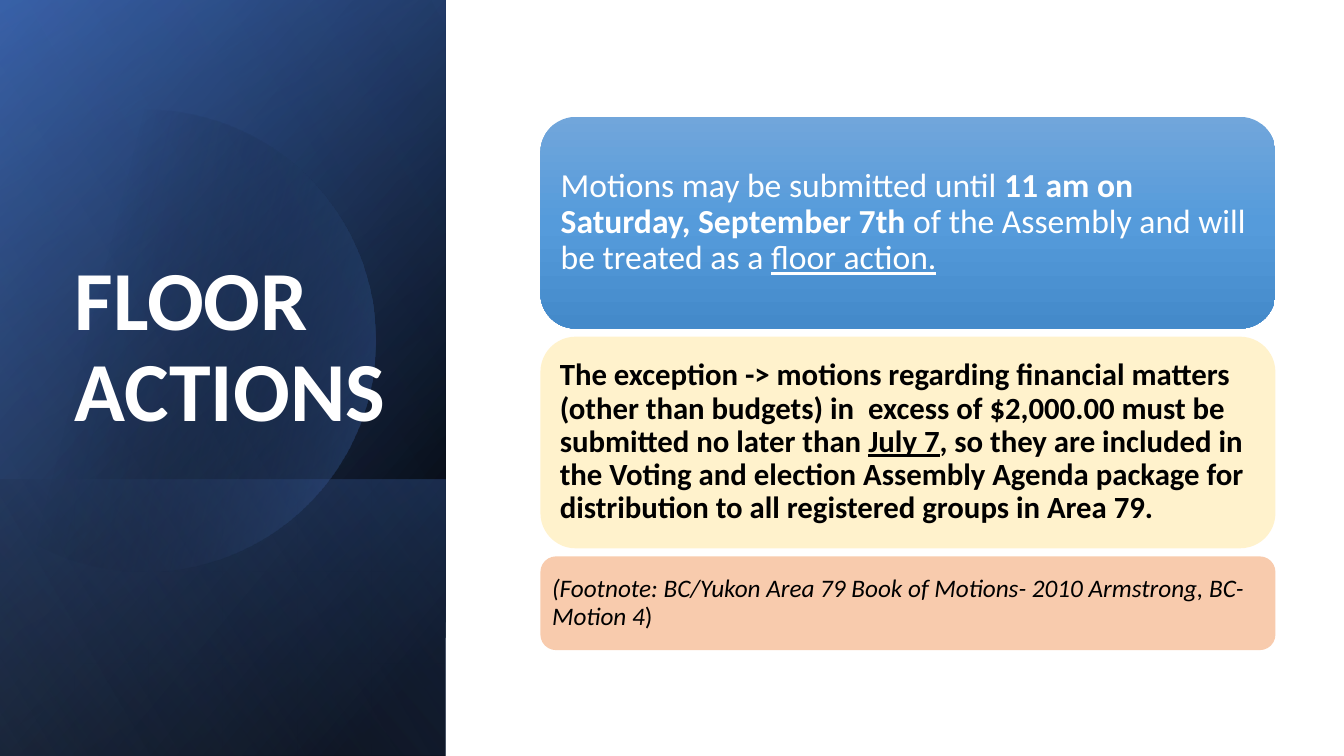
import math
import pptx
import pptx.dml.color
import pptx.enum.shapes
import pptx.enum.text
import pptx.oxml
import pptx.oxml.ns
import pptx.util

WIDTH, HEIGHT = 13.33, 7.5
PANEL_WIDTH = 4.42
TITLE = "FLOOR ACTIONS"
TITLE_FORMAT = {"size": 60, "bold": True, "color": "FFFFFF"}

PANEL_LAYERS = [
    (0, 50, [(8, "000000", 100), (100, "2F5597", 100)]),
    (0, 30, [(0, "000000", 0), (99, "4472C4", 46)]),
    (4.76, 130, [(2, "4472C4", 29), (100, "000000", 30)]),
]
GLOW_LAYER = (0, 120, [(0, "000000", 0), (99, "8FAADC", 11)])
DISC = {"x": 1.43, "y": 3.38, "radius": 2.29}
DISC_FILL = (14, [(29, "000000", 0), (100, "4472C4", 43)])

CARD_LEFT, CARD_TOP, CARD_WIDTH, CARD_GAP = 5.36, 1.16, 7.29, 0.08
CARDS = [
    {
        "height": 2.1, "inset": 0.1,
        "fill": (90, [(0, "71A6DB", 100), (50, "559BDB", 100), (100, "448ACA", 100)]),
        "format": {"size": 24, "color": "FFFFFF"},
        "spans": [
            ("Motions may be submitted until ", {}),
            ("11 am on Saturday, September 7th ", {"bold": True}),
            ("of the Assembly and will be treated as a ", {}),
            ("floor action.", {"underline": True}),
        ],
    },
    {
        "height": 2.1, "inset": 0.09, "fill": "FFF2CC",
        "format": {"size": 22, "color": "000000", "bold": True},
        "spans": [
            ("The exception -> motions regarding financial matters (other than budgets) in  "
             "excess of $2,000.00 must be submitted no later than ", {}),
            ("July 7", {"underline": True}),
            (", so they are included in the Voting and election Assembly Agenda package "
             "for distribution to all registered groups in Area 79.", {}),
        ],
    },
    {
        "height": 0.93, "inset": 0.07, "fill": "F8CBAD",
        "format": {"size": 18, "color": "000000"},
        "spans": [
            ("(Footnote: BC/Yukon Area 79 Book of Motions- 2010 Armstrong, BC-Motion 4",
             {"italic": True}),
            (")", {}),
        ],
    },
]


def rgb(value):
    return pptx.dml.color.RGBColor.from_string(value)


def inches(*lengths):
    return [pptx.util.Inches(length) for length in lengths]


def paint(shape, fill):
    shape.shadow.inherit = False
    shape.line.fill.background()
    if isinstance(fill, str):
        shape.fill.solid()
        shape.fill.fore_color.rgb = rgb(fill)
        return
    angle, stops = fill
    stop_xml = "".join(
        f'<a:gs pos="{place * 1000}"><a:srgbClr val="{color}">'
        f'<a:alpha val="{opacity * 1000}"/></a:srgbClr></a:gs>'
        for place, color, opacity in stops
    )
    gradient = pptx.oxml.parse_xml(
        f'<a:gradFill {pptx.oxml.ns.nsdecls("a")} rotWithShape="1"><a:gsLst>{stop_xml}'
        f'</a:gsLst><a:lin ang="{angle * 60000}" scaled="0"/></a:gradFill>'
    )
    shape.element.spPr.insert(2, gradient)


def write(shape, spans, base, anchor, inset):
    frame = shape.text_frame
    frame.word_wrap = True
    frame.vertical_anchor = anchor
    for side in ("left", "right", "top", "bottom"):
        setattr(frame, f"margin_{side}", pptx.util.Inches(inset))
    para = frame.paragraphs[0]
    para.alignment = pptx.enum.text.PP_ALIGN.LEFT
    para.line_spacing = 0.9
    for text, extra in spans:
        span = para.add_run()
        span.text = text
        values = {"name": "Calibri", **base, **extra}
        span.font.color.rgb = rgb(values.pop("color"))
        values["size"] = pptx.util.Pt(values["size"])
        for name, value in values.items():
            setattr(span.font, name, value)


def add_layer(page, top, angle, stops):
    length = HEIGHT - top
    left = (PANEL_WIDTH - length) / 2
    box_top = top + (length - PANEL_WIDTH) / 2
    layer = page.shapes.add_shape(
        pptx.enum.shapes.MSO_SHAPE.RECTANGLE, *inches(left, box_top, length, PANEL_WIDTH))
    layer.rotation = 90
    layer.element.spPr.find(pptx.oxml.ns.qn("a:xfrm")).set("flipH", "1")
    paint(layer, (angle, stops))


def add_disc(page):
    limit = math.acos(-DISC["x"] / DISC["radius"])
    steps = 120
    points = []
    for step in range(steps + 1):
        turn = -limit + 2 * limit * step / steps
        points.append(inches(DISC["x"] + DISC["radius"] * math.cos(turn),
                             DISC["y"] + DISC["radius"] * math.sin(turn)))
    builder = page.shapes.build_freeform(*points[0])
    builder.add_line_segments(points[1:], close=True)
    paint(builder.convert_to_shape(), DISC_FILL)


def add_title(page):
    title = page.shapes.title
    title.left, title.top, title.width, title.height = inches(0.64, 1.84, 3.41, 2.62)
    page.shapes.element.append(title.element)
    write(title, [(TITLE, {})], TITLE_FORMAT, pptx.enum.text.MSO_ANCHOR.BOTTOM, 0.1)


def add_cards(page):
    top = CARD_TOP
    for card in CARDS:
        box = page.shapes.add_shape(
            pptx.enum.shapes.MSO_SHAPE.ROUNDED_RECTANGLE,
            *inches(CARD_LEFT, top, CARD_WIDTH, card["height"]))
        paint(box, card["fill"])
        write(box, card["spans"], card["format"],
              pptx.enum.text.MSO_ANCHOR.MIDDLE, card["inset"])
        top += card["height"] + CARD_GAP


def main():
    deck = pptx.Presentation()
    deck.slide_width, deck.slide_height = inches(WIDTH, HEIGHT)
    page = deck.slides.add_slide(deck.slide_layouts[5])
    for layer in PANEL_LAYERS:
        add_layer(page, *layer)
    add_disc(page)
    add_layer(page, *GLOW_LAYER)
    add_title(page)
    add_cards(page)
    deck.save("out.pptx")


if __name__ == "__main__":
    main()
